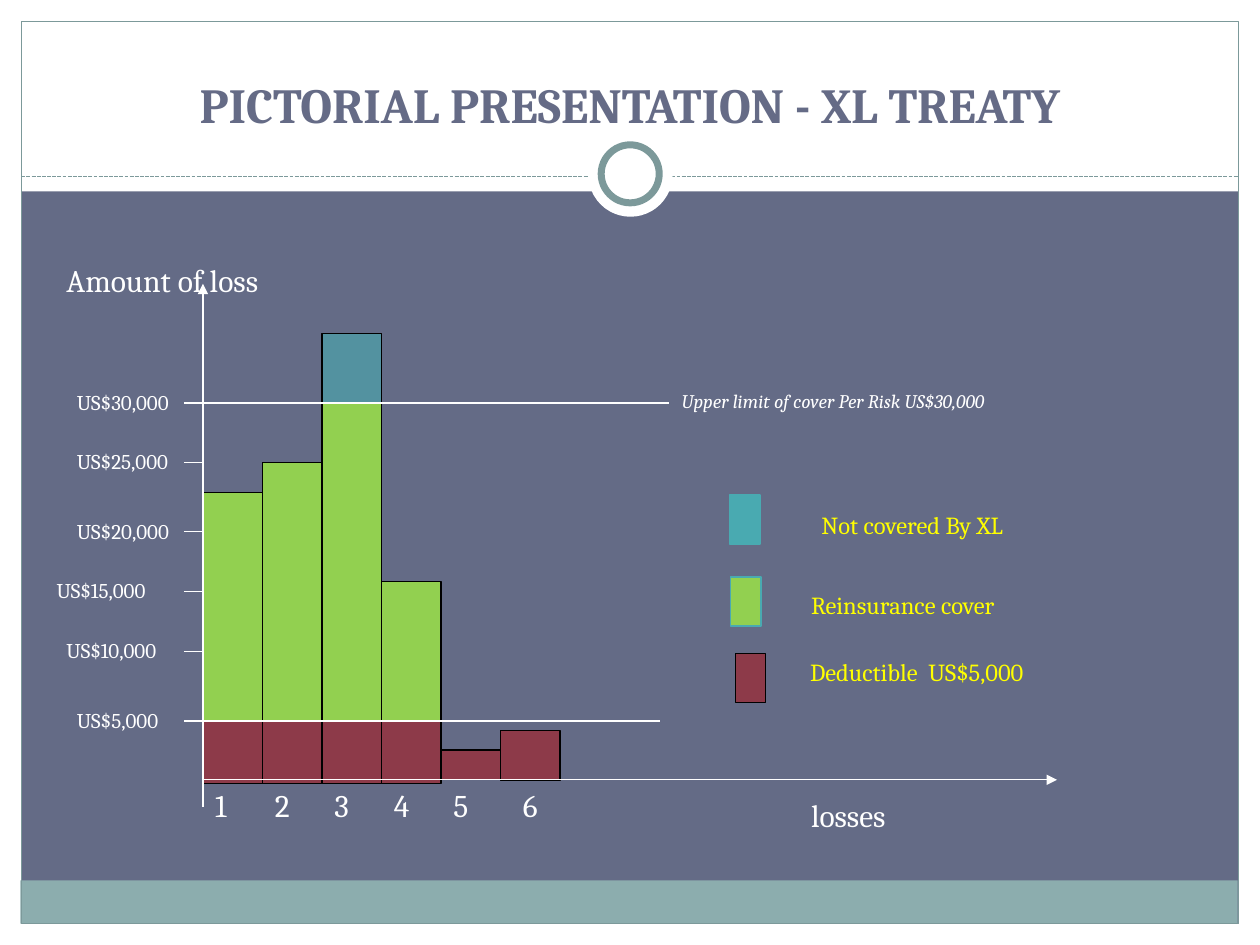
from lxml.etree import SubElement
from pptx import Presentation
from pptx.dml.color import RGBColor
from pptx.enum.dml import MSO_LINE
from pptx.enum.shapes import MSO_CONNECTOR, MSO_SHAPE
from pptx.enum.text import MSO_ANCHOR, PP_ALIGN
from pptx.oxml.ns import qn
from pptx.util import Cm, Pt

COLOURS = {
    "slate": "646B86", "title": "656B86", "white": "FFFFFF", "black": "000000",
    "frame": "7C999A", "footer": "8CADAE", "yellow": "FFFF00",
    "deductible": "C00000", "cover": "92D050", "uncovered": "49AAB1",
}
FONT = "Cambria"

# Chart geometry in cm
AXIS_X, AXIS_Y = 4.09, 15.72
BAR_WIDTH = 1.2
TICK_X = 3.71
DEDUCTIBLE_Y, LIMIT_Y = 14.53, 8.13


def rgb(name):
    return RGBColor.from_string(COLOURS[name])


def add_block(slide, left, top, width, height, fill=None, line=None,
              weight=0.75, alpha=None, kind=MSO_SHAPE.RECTANGLE):
    block = slide.shapes.add_shape(kind, Cm(left), Cm(top), Cm(width), Cm(height))
    block.shadow.inherit = False
    if fill:
        block.fill.solid()
        block.fill.fore_color.rgb = rgb(fill)
        if alpha:
            colour = block.fill._xPr.find(qn("a:solidFill"))[0]
            SubElement(colour, qn("a:alpha"), val=str(alpha * 1000))
    else:
        block.fill.background()
    if line:
        block.line.color.rgb = rgb(line)
        block.line.width = Pt(weight)
    else:
        block.line.fill.background()


def add_line(slide, x1, y1, x2, y2, colour="white", weight=0.75,
             arrow=False, dashed=False):
    connector = slide.shapes.add_connector(
        MSO_CONNECTOR.STRAIGHT, Cm(x1), Cm(y1), Cm(x2), Cm(y2))
    connector.line.color.rgb = rgb(colour)
    connector.line.width = Pt(weight)
    if dashed:
        connector.line.dash_style = MSO_LINE.SQUARE_DOT
    if arrow:
        SubElement(connector.line._get_or_add_ln(), qn("a:tailEnd"), type="triangle")
    SubElement(connector._element.spPr, qn("a:effectLst"))


def add_text(slide, text, left, top, width, height, size, colour="white",
             bold=False, italic=False, align=PP_ALIGN.LEFT, anchor=MSO_ANCHOR.TOP):
    frame = slide.shapes.add_textbox(
        Cm(left), Cm(top), Cm(width), Cm(height)).text_frame
    frame.word_wrap = True
    frame.vertical_anchor = anchor
    paragraph = frame.paragraphs[0]
    paragraph.text = text
    paragraph.alignment = align
    font = paragraph.font
    font.name, font.size, font.bold, font.italic = FONT, Pt(size), bold, italic
    font.color.rgb = rgb(colour)


def add_backdrop(slide):
    slide.background.fill.solid()
    slide.background.fill.fore_color.rgb = rgb("slate")
    # White margins and title band
    for margin in [(0, 18.62, 25.4, 0.43), (0, 0, 25.4, 3.86),
                   (0, 0, 0.43, 19.05), (24.97, 0, 0.43, 19.05)]:
        add_block(slide, *margin, fill="white")
    add_block(slide, 0.41, 17.75, 24.54, 0.87, fill="footer")
    add_block(slide, 0.43, 0.43, 24.54, 18.19, line="frame")
    # Divider with ring
    add_line(slide, 0.43, 3.56, 24.97, 3.56, "frame", dashed=True)
    add_block(slide, 11.86, 2.67, 1.7, 1.7, fill="white", kind=MSO_SHAPE.OVAL)
    add_block(slide, 12.12, 2.92, 1.17, 1.17, fill="white", line="frame",
              weight=4, kind=MSO_SHAPE.OVAL)


def add_bars(slide):
    # Losses 5 and 6 stay below the deductible
    deductibles = [(DEDUCTIBLE_Y, 1.27)] * 4 + [(15.12, 0.6), (14.72, 1.01)]
    for i, (top, height) in enumerate(deductibles):
        add_block(slide, AXIS_X + i * BAR_WIDTH, top, BAR_WIDTH, height,
                  "deductible", "black", alpha=45)
    for i, top in enumerate([9.93, 9.32, LIMIT_Y, 11.73]):
        add_block(slide, AXIS_X + i * BAR_WIDTH, top, BAR_WIDTH,
                  DEDUCTIBLE_Y - top, "cover", "black")
    add_block(slide, AXIS_X + 2 * BAR_WIDTH, 6.73, BAR_WIDTH, LIMIT_Y - 6.73,
              "uncovered", "black", alpha=62)


def add_axes(slide):
    # Amount labels with their ticks; the two limits run across the bars
    amounts = [
        ("US$30,000", 1.3, LIMIT_Y, 13.49, 1.25),
        ("US$25,000", 1.3, 9.32, AXIS_X, 0.75),
        ("US$20,000", 1.3, 10.72, AXIS_X, 0.75),
        ("US$15,000", 0.89, 11.92, AXIS_X, 0.75),
        ("US$10,000", 1.09, 13.13, AXIS_X, 0.75),
        ("US$5,000", 1.3, DEDUCTIBLE_Y, 13.31, 1.25),
    ]
    for amount, left, y, line_end, weight in amounts:
        add_text(slide, amount, left, y - 0.4, 2.9, 0.77, 12)
        add_line(slide, TICK_X, y, line_end, y, weight=weight)
    # Loss numbers
    for i in range(6):
        nudge = 0.2 if i == 5 else 0
        add_text(slide, str(i + 1), AXIS_X + i * BAR_WIDTH + nudge, AXIS_Y,
                 BAR_WIDTH, 1.02, 18)
    add_line(slide, AXIS_X, 16.26, AXIS_X, 5.72, arrow=True)
    add_line(slide, AXIS_X, AXIS_Y, 21.31, AXIS_Y, arrow=True)
    add_text(slide, "Amount of loss", 1.09, 5.13, 5.46, 1.02, 18)
    add_text(slide, "losses", 16.1, 15.93, 6.6, 1.02, 18)
    add_text(slide, "Upper limit of cover Per Risk US$30,000",
             13.49, 7.72, 10, 0.74, 11, italic=True)


def add_legend(slide):
    entries = [
        ("Not covered By XL", 16.31, 10.16, 14.71, 9.98, "uncovered", "uncovered", None),
        ("Reinsurance cover", 16.1, 11.76, 14.73, 11.63, "cover", "uncovered", None),
        ("Deductible  US$5,000", 16.08, 13.13, 14.83, 13.18, "deductible", "black", 45),
    ]
    for label, left, top, key_left, key_top, fill, line, alpha in entries:
        add_block(slide, key_left, key_top, 0.61, 0.99, fill, line, alpha=alpha)
        add_text(slide, label, left, top, 6, 0.86, 14, "yellow")


def main():
    deck = Presentation()
    deck.slide_width, deck.slide_height = Cm(25.4), Cm(19.05)
    slide = deck.slides.add_slide(deck.slide_layouts[6])
    add_backdrop(slide)
    add_text(slide, "PICTORIAL PRESENTATION - XL TREATY", 0.53, 0.84, 24.33, 1.98,
             28, "title", bold=True, align=PP_ALIGN.CENTER, anchor=MSO_ANCHOR.BOTTOM)
    add_bars(slide)
    add_axes(slide)
    add_legend(slide)
    deck.save("out.pptx")


if __name__ == "__main__":
    main()
